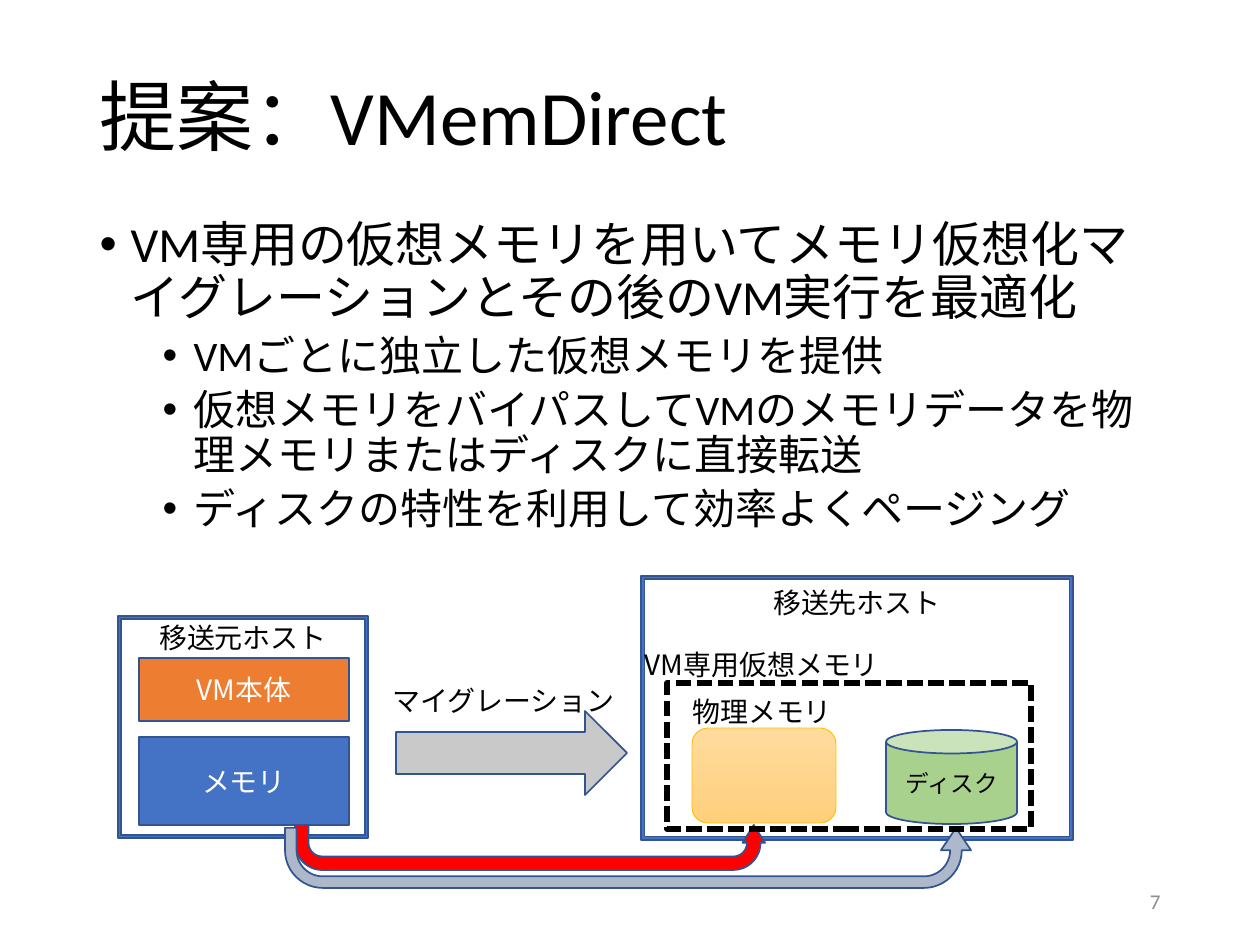
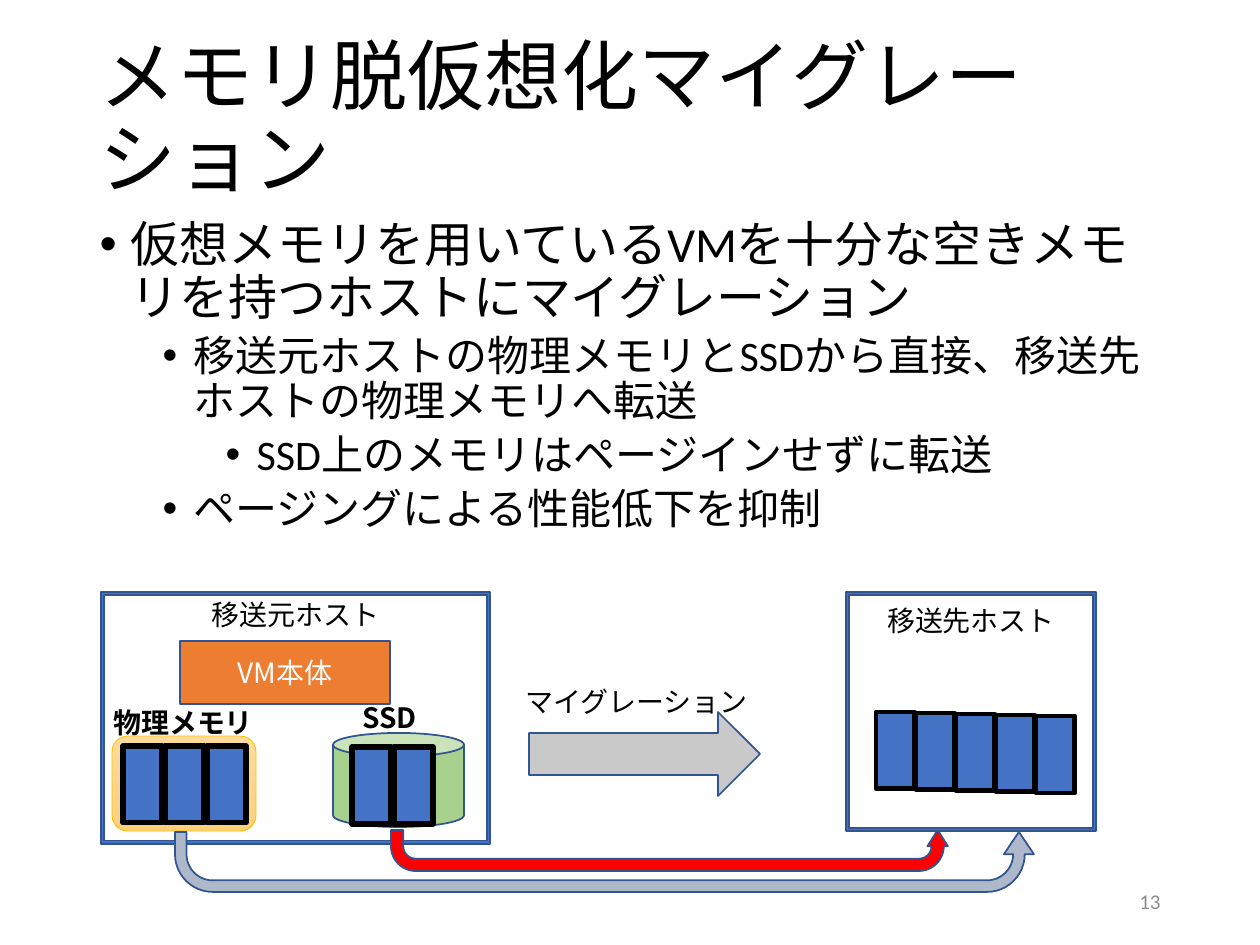
from dataclasses import dataclass

from lxml.etree import SubElement
from pptx import Presentation
from pptx.dml.color import RGBColor
from pptx.enum.dml import MSO_LINE
from pptx.enum.shapes import MSO_SHAPE
from pptx.enum.text import MSO_ANCHOR, MSO_AUTO_SIZE, PP_ALIGN
from pptx.oxml.ns import qn
from pptx.util import Emu, Pt

PIXELS_PER_INCH = 126
LATIN_FONT = "Calibri"
JAPANESE_FONT = "Noto Sans CJK JP"
BLACK, WHITE, GRAY = "000000", "FFFFFF", "8C8C8C"
BLUE, OUTLINE, ORANGE = "4472C4", "325491", "ED7D31"
GREEN, ARROW_GRAY, RED, PALE_BLUE = "A9D18E", "C9C9C9", "FF0000", "ADB9CA"
GOLD, GOLD_LIGHT, GOLD_DARK = "FFC000", "FFDB9E", "FFD07C"
TITLE_BOX = (87, 50, 1087, 142)
BODY_BOX = (87, 214, 1087, 638)
NUMBER_BOX = (890, 876, 283, 50)
LEVEL_SIZES = (28, 24, 24)
RED_BEND = (0.3, 0.25, 0.396, 0.629, 1)
PALE_BEND = (0.193, 0.25, 0.371, 0.629, 1)

Box = tuple[int, int, int, int]


@dataclass(frozen=True)
class Node:
    kind: MSO_SHAPE
    box: Box
    fill: str | None = None
    text: str = ""
    text_color: str = WHITE
    size: float = 16
    line: str = OUTLINE
    line_width: float = 1
    dashed: bool = False
    gradient_end: str | None = None
    adjustments: tuple[float, ...] = ()
    flipped: bool = False
    top_inset: int | None = None


@dataclass(frozen=True)
class Label:
    box: Box
    text: str
    bold: bool = False
    alignment: PP_ALIGN = PP_ALIGN.LEFT


@dataclass(frozen=True)
class Page:
    number: int
    title: str
    bullets: tuple[tuple[int, str], ...]
    items: tuple[Node | Label, ...]


def px(value: int) -> Emu:
    return Emu(round(value * 914400 / PIXELS_PER_INCH))


def color(value: str) -> RGBColor:
    return RGBColor.from_string(value)


def add_run(paragraph, text: str, size: float, value: str = BLACK,
            latin: str = JAPANESE_FONT, bold: bool = False) -> None:
    run = paragraph.add_run()
    run.text = text
    run.font.size = Pt(size)
    run.font.bold = bold
    run.font.name = latin
    run.font.color.rgb = color(value)
    SubElement(run.font._element, qn("a:ea"), typeface=JAPANESE_FONT)


def place(shape, box: Box) -> None:
    shape.left, shape.top, shape.width, shape.height = map(px, box)


def fill_title(shape, text: str) -> None:
    place(shape, TITLE_BOX)
    frame = shape.text_frame
    frame.auto_size = MSO_AUTO_SIZE.NONE
    frame.vertical_anchor = MSO_ANCHOR.MIDDLE
    paragraph = frame.paragraphs[0]
    paragraph.alignment = PP_ALIGN.LEFT
    paragraph.line_spacing = 0.9
    add_run(paragraph, text, 44, latin=LATIN_FONT)


def fill_body(shape, bullets: tuple[tuple[int, str], ...]) -> None:
    place(shape, BODY_BOX)
    frame = shape.text_frame
    frame.auto_size = MSO_AUTO_SIZE.NONE
    for index, (level, text) in enumerate(bullets):
        paragraph = frame.add_paragraph() if index else frame.paragraphs[0]
        paragraph.level = level
        paragraph.line_spacing = 0.9
        paragraph.space_before = Pt(5 if level else 10)
        paragraph.space_after = Pt(0)
        properties = paragraph._p.get_or_add_pPr()
        properties.set("marL", str(px(31 + 63 * level)))
        properties.set("indent", str(px(-31)))
        SubElement(properties, qn("a:buFont"), typeface="Arial")
        SubElement(properties, qn("a:buChar"), char="•")
        add_run(paragraph, text, LEVEL_SIZES[level], latin=LATIN_FONT)


def add_number(slide, number: int) -> None:
    frame = slide.shapes.add_textbox(*map(px, NUMBER_BOX)).text_frame
    frame.word_wrap = True
    frame.vertical_anchor = MSO_ANCHOR.MIDDLE
    frame.paragraphs[0].alignment = PP_ALIGN.RIGHT
    add_run(frame.paragraphs[0], str(number), 12, GRAY, LATIN_FONT)


def draw_label(slide, label: Label) -> None:
    frame = slide.shapes.add_textbox(*map(px, label.box)).text_frame
    frame.word_wrap = True
    frame.paragraphs[0].alignment = label.alignment
    add_run(frame.paragraphs[0], label.text, 16, bold=label.bold)


def draw_node(slide, node: Node) -> None:
    shape = slide.shapes.add_shape(node.kind, *map(px, node.box))
    shape.shadow.inherit = False
    for index, value in enumerate(node.adjustments):
        shape.adjustments[index] = value
    if node.gradient_end:
        shape.fill.gradient()
        shape.fill.gradient_angle = 270
        for stop, value in zip(shape.fill.gradient_stops, (node.fill, node.gradient_end)):
            stop.color.rgb = color(value)
    elif node.fill:
        shape.fill.solid()
        shape.fill.fore_color.rgb = color(node.fill)
    else:
        shape.fill.background()
    shape.line.color.rgb = color(node.line)
    shape.line.width = Pt(node.line_width)
    if node.dashed:
        shape.line.dash_style = MSO_LINE.SQUARE_DOT
    if node.flipped:
        shape._element.spPr.find(qn("a:xfrm")).set("flipV", "1")
    if node.text:
        frame = shape.text_frame
        frame.vertical_anchor = MSO_ANCHOR.MIDDLE
        if node.top_inset is not None:
            frame.vertical_anchor = MSO_ANCHOR.TOP
            frame.margin_top = px(node.top_inset)
        frame.paragraphs[0].alignment = PP_ALIGN.CENTER
        add_run(frame.paragraphs[0], node.text, node.size, node.text_color)


def host(box: Box, name: str, top_inset: int) -> Node:
    return Node(MSO_SHAPE.FRAME, box, BLUE, name, BLACK,
                adjustments=(0.013,), top_inset=top_inset)


def disk(left: int, top: int, text: str = "") -> Node:
    return Node(MSO_SHAPE.CAN, (left, top, 131, 94), GREEN, text, BLACK, 13.5)


def physical_memory(left: int, top: int) -> Node:
    return Node(MSO_SHAPE.ROUNDED_RECTANGLE, (left, top, 144, 95), GOLD_LIGHT,
                line=GOLD, line_width=0.5, gradient_end=GOLD_DARK)


def virtual_machine(left: int, top: int) -> Node:
    return Node(MSO_SHAPE.RECTANGLE, (left, top, 210, 63), ORANGE, "VM本体")


def migration(left: int, top: int) -> tuple[Node, Label]:
    return (Node(MSO_SHAPE.RIGHT_ARROW, (left, top, 231, 84), ARROW_GRAY),
            Label((left - 16, top - 34, 278, 47), "マイグレーション"))


def transfer(box: Box, fill: str, bend: tuple[float, ...]) -> Node:
    return Node(MSO_SHAPE.U_TURN_ARROW, box, fill, adjustments=bend, flipped=True)


def memory_pages(left: int, top: int, count: int, step: int, drop: int = 0,
                 line_width: float = 3) -> tuple[Node, ...]:
    return tuple(
        Node(MSO_SHAPE.RECTANGLE, (left + step * index, top + drop * index, 39, 77),
             BLUE, line=BLACK, line_width=line_width)
        for index in range(count))


PAGES = (
    Page(7, "提案：VMemDirect", (
        (0, "VM専用の仮想メモリを用いてメモリ仮想化マイグレーションとその後のVM実行を最適化"),
        (1, "VMごとに独立した仮想メモリを提供"),
        (1, "仮想メモリをバイパスしてVMのメモリデータを物理メモリまたはディスクに直接転送"),
        (1, "ディスクの特性を利用して効率よくページング"),
    ), (
        host((641, 576, 432, 264), "移送先ホスト", 6),
        disk(886, 730, "ディスク"),
        physical_memory(692, 728),
        Label((680, 688, 168, 47), "物理メモリ"),
        host((118, 616, 250, 222), "移送元ホスト", 2),
        virtual_machine(139, 658),
        Node(MSO_SHAPE.RECTANGLE, (139, 737, 210, 88), BLUE, "メモリ"),
        *migration(396, 711),
        transfer((295, 825, 470, 45), RED, RED_BEND),
        transfer((285, 828, 686, 60), PALE_BLUE, PALE_BEND),
        Node(MSO_SHAPE.RECTANGLE, (667, 683, 364, 146),
             line=BLACK, line_width=3, dashed=True),
        Label((592, 641, 340, 47), "VM専用仮想メモリ", alignment=PP_ALIGN.CENTER),
    )),
    Page(13, "メモリ脱仮想化マイグレーション", (
        (0, "仮想メモリを用いているVMを十分な空きメモリを持つホストにマイグレーション"),
        (1, "移送元ホストの物理メモリとSSDから直接、移送先ホストの物理メモリへ転送"),
        (2, "SSD上のメモリはページインせずに転送"),
        (1, "ページングによる性能低下を抑制"),
    ), (
        host((101, 592, 389, 252), "移送元ホスト", 2),
        disk(333, 733),
        physical_memory(112, 736),
        *migration(529, 712),
        transfer((391, 830, 557, 41), RED, RED_BEND),
        transfer((175, 832, 859, 60), PALE_BLUE, PALE_BEND),
        Label((101, 699, 168, 47), "物理メモリ", bold=True),
        host((846, 592, 250, 239), "移送先ホスト", 9),
        virtual_machine(180, 641),
        *memory_pages(352, 747, 2, 42),
        *memory_pages(123, 746, 3, 42),
        Label((350, 694, 168, 47), "SSD", bold=True),
        *memory_pages(876, 712, 5, 40, drop=1, line_width=2.75),
    )),
)


def build_slide(presentation, page: Page) -> None:
    slide = presentation.slides.add_slide(presentation.slide_layouts[1])
    fill_title(slide.shapes.title, page.title)
    fill_body(slide.placeholders[1], page.bullets)
    add_number(slide, page.number)
    for item in page.items:
        if isinstance(item, Label):
            draw_label(slide, item)
        else:
            draw_node(slide, item)


def main() -> None:
    presentation = Presentation()
    presentation.slide_width = px(1260)
    presentation.slide_height = px(945)
    for page in PAGES:
        build_slide(presentation, page)
    presentation.save("out.pptx")


if __name__ == "__main__":
    main()
